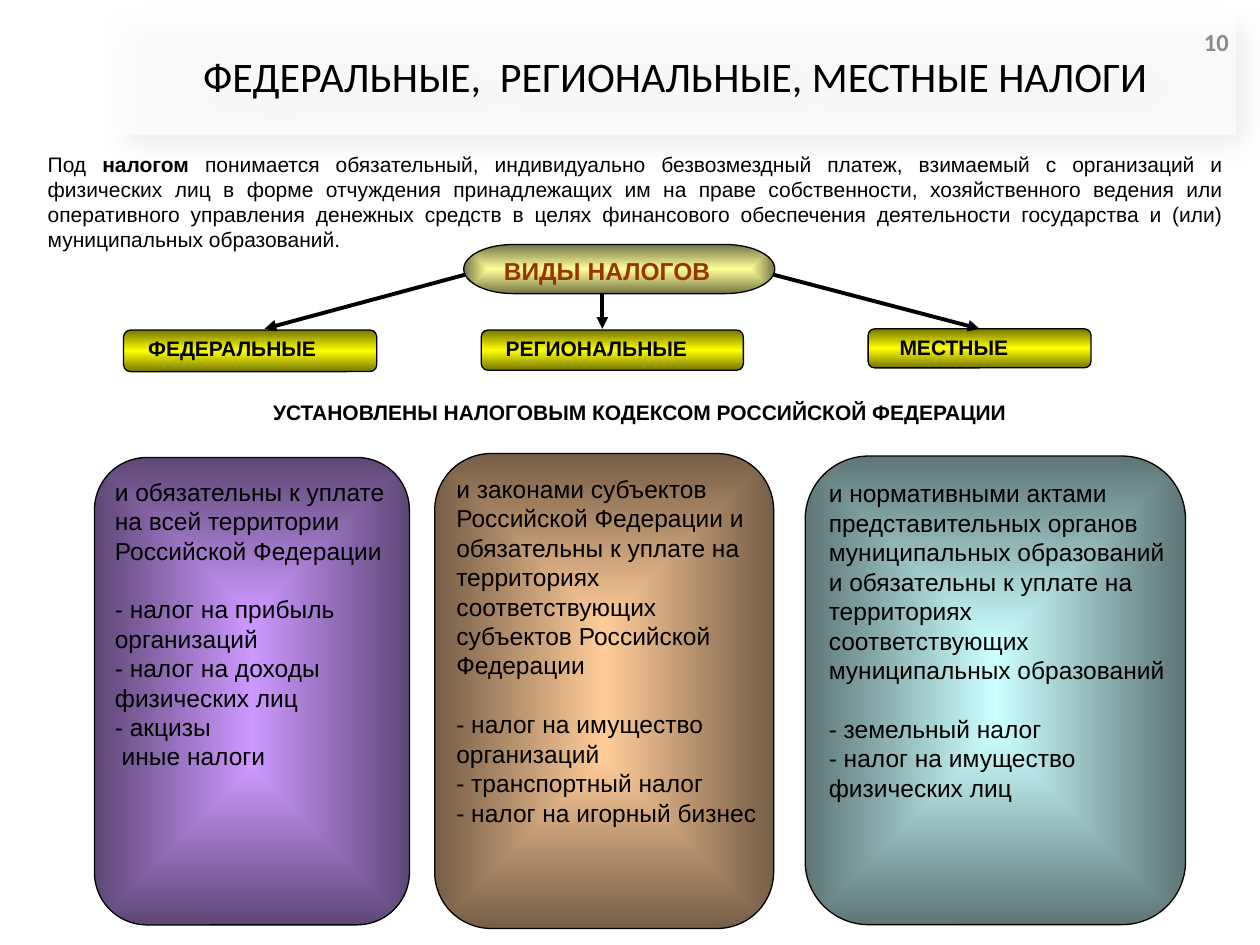
from lxml.etree import SubElement
from pptx import Presentation
from pptx.dml.color import RGBColor
from pptx.enum.shapes import MSO_CONNECTOR, MSO_SHAPE
from pptx.enum.text import MSO_ANCHOR, PP_ALIGN
from pptx.oxml import parse_xml
from pptx.oxml.ns import nsdecls, qn
from pptx.util import Pt


def color(value):
    return RGBColor.from_string(value)


class TaxSlide:
    font = "Arial"
    ink = "000000"
    blank_line = 16.8

    def __init__(self, presentation):
        self.slide = presentation.slides.add_slide(presentation.slide_layouts[6])

    def fill_text(self, shape, paragraphs, size, align=PP_ALIGN.LEFT, anchor=MSO_ANCHOR.TOP,
                  bold=False, ink=ink, font=font, insets=(7.2, 3.6, 7.2, 3.6)):
        """Each paragraph is a list of (text, bold) runs or a plain string."""
        frame = shape.text_frame
        frame.word_wrap = True
        frame.vertical_anchor = anchor
        (frame.margin_left, frame.margin_top,
         frame.margin_right, frame.margin_bottom) = map(Pt, insets)
        for index, content in enumerate(paragraphs):
            paragraph = frame.add_paragraph() if index else frame.paragraphs[0]
            paragraph.alignment = align
            runs = [(content, bold)] if isinstance(content, str) else content
            for text, is_bold in runs:
                run = paragraph.add_run()
                run.text = text
                run.font.name = font
                run.font.size = Pt(size)
                run.font.bold = is_bold
                run.font.color.rgb = color(ink)

    def text(self, box, paragraphs, size, **style):
        shape = self.slide.shapes.add_textbox(*map(Pt, box))
        self.fill_text(shape, paragraphs, size, **style)

    def title(self, box, text):
        shape = self.slide.shapes.add_shape(MSO_SHAPE.RECTANGLE, *map(Pt, box))
        shape.fill.solid()
        shape.fill.fore_color.rgb = color("FFFFFF")
        shape.line.fill.background()
        properties = shape._element.spPr
        fill_color = properties.find(qn("a:solidFill")).find(qn("a:srgbClr"))
        SubElement(fill_color, qn("a:alpha"), val="65000")
        properties.append(parse_xml(
            f'<a:effectLst {nsdecls("a")}>'
            f'<a:outerShdw blurRad="{Pt(16)}" dist="{Pt(7)}" dir="2700000" algn="tl" rotWithShape="0">'
            f'<a:srgbClr val="{self.ink}"><a:alpha val="10000"/></a:srgbClr>'
            '</a:outerShdw></a:effectLst>'))
        self.fill_text(shape, [text], 24, align=PP_ALIGN.CENTER,
                       anchor=MSO_ANCHOR.MIDDLE, font="Calibri")

    def gradient_shape(self, kind, box, stops, direction, paragraphs, size, indent=0, **style):
        shape = self.slide.shapes.add_shape(kind, *map(Pt, box))
        last = len(stops) - 1
        stop_list = "".join(
            f'<a:gs pos="{100000 * index // last}"><a:srgbClr val="{stop}"/></a:gs>'
            for index, stop in enumerate(stops))
        shape._element.spPr.insert(2, parse_xml(
            f'<a:gradFill {nsdecls("a")} rotWithShape="0">'
            f'<a:gsLst>{stop_list}</a:gsLst>{direction}</a:gradFill>'))
        shape.line.color.rgb = color(self.ink)
        shape.line.width = Pt(0.75)
        shape.shadow.inherit = False
        self.fill_text(shape, paragraphs, size, insets=(2.9 + indent, 2.2, 0, 0), **style)
        return shape

    def glow(self, kind, box, center, edge, paragraphs, **style):
        direction = ('<a:path path="rect"><a:fillToRect l="50000" t="50000" '
                     'r="50000" b="50000"/></a:path>')
        return self.gradient_shape(kind, box, (center, edge), direction,
                                   paragraphs, 14, **style)

    def card(self, box, center, edge, paragraphs):
        shape = self.glow(MSO_SHAPE.FLOWCHART_ALTERNATE_PROCESS, box, center, edge, paragraphs)
        shape.text_frame.paragraphs[1].space_before = Pt(self.blank_line)
        return shape

    def bar(self, box, text, indent):
        return self.gradient_shape(
            MSO_SHAPE.ROUNDED_RECTANGLE, box, ("767600", "FFFF00", "767600"),
            '<a:lin ang="5400000" scaled="1"/>', [text], 12, indent=indent, bold=True)

    def arrow(self, start, end, target=None):
        line = self.slide.shapes.add_connector(MSO_CONNECTOR.STRAIGHT, *map(Pt, start + end))
        if target is not None:
            line.end_connect(target, 0)
        line.line.color.rgb = color(self.ink)
        line.line.width = Pt(2.25)
        properties = line._element.spPr
        SubElement(properties.get_or_add_ln(), qn("a:tailEnd"), type="triangle")
        SubElement(properties, qn("a:effectLst"))


def main():
    presentation = Presentation()
    presentation.slide_width, presentation.slide_height = Pt(720), Pt(540)
    page = TaxSlide(presentation)

    # Title and definition
    page.title((65.5, 9.4, 640.8, 67.7), "ФЕДЕРАЛЬНЫЕ,  РЕГИОНАЛЬНЫЕ, МЕСТНЫЕ НАЛОГИ")
    page.text((20.2, 82.8, 686.2, 65.5), [[
        ("Под ", False),
        ("налогом", True),
        (" понимается обязательный, индивидуально безвозмездный платеж, взимаемый с "
         "организаций и физических лиц в форме отчуждения принадлежащих им на праве "
         "собственности, хозяйственного ведения или оперативного управления денежных "
         "средств в целях финансового обеспечения деятельности государства и (или) "
         "муниципальных образований.", False),
    ]], 12, align=PP_ALIGN.JUSTIFY)

    # Root of the tree
    page.glow(MSO_SHAPE.FLOWCHART_TERMINATOR, (265, 139.7, 177.8, 28.1), "FFFF99", "767647",
              ["ВИДЫ НАЛОГОВ"], indent=11.7, bold=True, ink="993300")

    # Cards with the taxes of each level
    federal_card = page.card((54, 261.4, 180, 267.1), "CC99FF", "5E4776", [
        "и обязательны к уплате на всей территории Российской Федерации",
        "- налог на прибыль организаций",
        "- налог на доходы физических лиц",
        "- акцизы",
        "иные налоги",
    ])
    other_taxes = federal_card.text_frame.paragraphs[-1]
    other_taxes._p.get_or_add_pPr().set("marL", str(Pt(3.9)))
    page.card((248.4, 259.2, 193.7, 271.4), "FFCC99", "765E47", [
        "и законами субъектов Российской Федерации и обязательны к уплате на "
        "территориях соответствующих субъектов Российской Федерации",
        "- налог на имущество организаций",
        "- транспортный налог",
        "- налог на игорный бизнес",
    ])
    page.card((460.1, 260.6, 217.4, 267.8), "CCFFFF", "5E7676", [
        "и нормативными актами представительных органов муниципальных образований "
        "и обязательны к уплате на территориях соответствующих муниципальных образований",
        "- земельный налог",
        "- налог на имущество физических лиц",
    ])

    # Level names
    page.bar((70.6, 188.6, 144.7, 23.8), "ФЕДЕРАЛЬНЫЕ", 10)
    page.bar((275, 188.6, 149.8, 23), "РЕГИОНАЛЬНЫЕ", 10)
    local_bar = page.bar((496.1, 187.9, 127.4, 22.3), "МЕСТНЫЕ", 14)

    # Arrows from the root to the levels
    page.arrow((344.2, 167.8), (344.2, 187.9))
    page.arrow((265.7, 157), (151.2, 187.9))
    page.arrow((442.1, 157), (559.8, 187.9), local_bar)

    # Common caption and page number
    page.text((149, 224.6, 486.7, 23), ["УСТАНОВЛЕНЫ НАЛОГОВЫМ КОДЕКСОМ РОССИЙСКОЙ ФЕДЕРАЦИИ"],
              12, bold=True)
    page.text((660.2, 9.4, 49, 28.8), ["10"], 14, align=PP_ALIGN.RIGHT,
              anchor=MSO_ANCHOR.MIDDLE, bold=True, ink="8C8C8C", font="Calibri")

    presentation.save("out.pptx")


if __name__ == "__main__":
    main()
